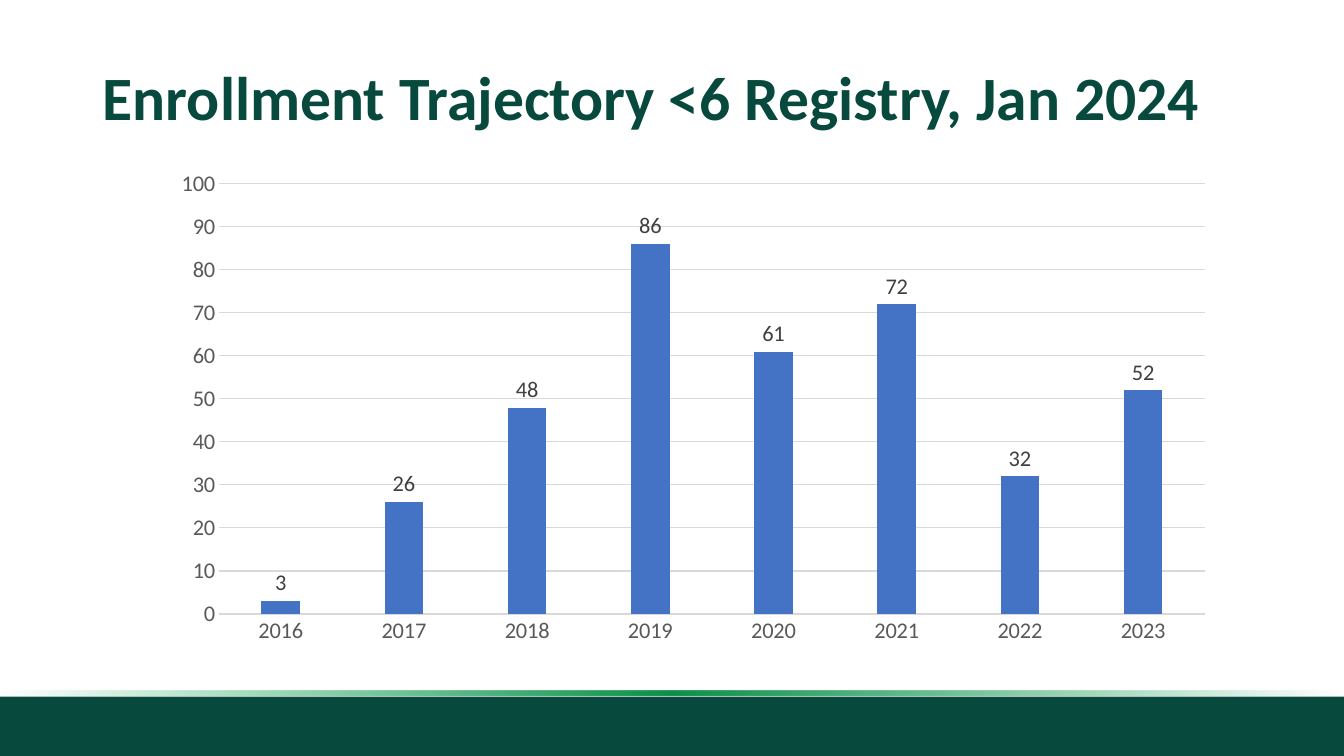
"""Build the enrollment trajectory slide with its column chart and footer bands."""
import dataclasses
import typing

import lxml.etree
import pptx
import pptx.chart.data
import pptx.dml.color
import pptx.enum.chart
import pptx.enum.shapes
import pptx.enum.text
import pptx.oxml.ns
import pptx.util

RGB = pptx.dml.color.RGBColor
DARK_GREEN = RGB(0x07, 0x49, 0x3C)
GLOW_LEFT = RGB(0x0D, 0x9D, 0x4F)
GLOW_MIDDLE = RGB(0x0C, 0x90, 0x49)
GLOW_RIGHT = RGB(0x0F, 0xAB, 0x56)
COLUMN_BLUE = RGB(0x44, 0x72, 0xC4)
AXIS_TEXT = RGB(0x59, 0x59, 0x59)
LABEL_TEXT = RGB(0x40, 0x40, 0x40)
GRID_GREY = RGB(0xD9, 0xD9, 0xD9)

FONT = "Calibri"
SLIDE_WIDTH = pptx.util.Inches(13.33)
SLIDE_HEIGHT = pptx.util.Inches(7.5)
ENROLLMENT = {
    "2016": 3, "2017": 26, "2018": 48, "2019": 86,
    "2020": 61, "2021": 72, "2022": 32, "2023": 52,
}


@dataclasses.dataclass(frozen=True)
class Area:
    """A region given in percent of the slide's width and height."""

    left: float
    top: float
    width: float
    height: float

    def box(self) -> tuple[int, int, int, int]:
        """Return left, top, width and height as slide lengths."""
        return (
            round(SLIDE_WIDTH * self.left / 100),
            round(SLIDE_HEIGHT * self.top / 100),
            round(SLIDE_WIDTH * self.width / 100),
            round(SLIDE_HEIGHT * self.height / 100),
        )


@dataclasses.dataclass(frozen=True)
class GlowStop:
    """One gradient stop, with position and opacity in percent."""

    position: int
    color: RGB
    opacity: int


@dataclasses.dataclass(frozen=True)
class Band:
    """A full-width footer band, plain with one stop and graded with more."""

    area: Area
    stops: tuple[GlowStop, ...]


TITLE_AREA = Area(6.9, 5.33, 86.27, 15.87)
CHART_AREA = Area(11.93, 21.2, 79.29, 65.47)
BANDS = (
    Band(Area(0, 92.13, 100, 7.87), (GlowStop(0, DARK_GREEN, 100),)),
    Band(
        Area(0, 91.33, 100, 0.73),
        (
            GlowStop(0, GLOW_LEFT, 0),
            GlowStop(50, GLOW_MIDDLE, 100),
            GlowStop(100, GLOW_RIGHT, 0),
        ),
    ),
)


def style_font(font: typing.Any, size: int, color: RGB, bold: bool = False) -> None:
    """Set the face, size, colour and weight of a font."""
    font.name = FONT
    font.size = pptx.util.Pt(size)
    font.bold = bold
    font.color.rgb = color


def style_line(line: typing.Any) -> None:
    """Give a chart line the thin grey of the grid."""
    line.color.rgb = GRID_GREY
    line.width = pptx.util.Pt(0.75)


def set_stops(fill: typing.Any, shape: typing.Any, stops: tuple[GlowStop, ...]) -> None:
    """Make a fill a horizontal gradient through the given stops."""
    qn = pptx.oxml.ns.qn
    fill.gradient()
    fill.gradient_angle = 180
    stop_list = shape.element.spPr.find(".//" + qn("a:gsLst"))
    for preset in list(stop_list):
        stop_list.remove(preset)
    for stop in stops:
        entry = lxml.etree.SubElement(stop_list, qn("a:gs"), pos=str(stop.position * 1000))
        color = lxml.etree.SubElement(entry, qn("a:srgbClr"), val=str(stop.color))
        lxml.etree.SubElement(color, qn("a:alpha"), val=str(stop.opacity * 1000))


def add_band(slide: typing.Any, band: Band) -> None:
    """Draw one footer band."""
    strip = slide.shapes.add_shape(pptx.enum.shapes.MSO_SHAPE.RECTANGLE, *band.area.box())
    strip.shadow.inherit = False
    strip.line.fill.background()
    if len(band.stops) > 1:
        set_stops(strip.fill, strip, band.stops)
    else:
        strip.fill.solid()
        strip.fill.fore_color.rgb = band.stops[0].color


def write_title(slide: typing.Any, wording: str) -> None:
    """Place the title placeholder and write its text."""
    heading = slide.shapes.title
    heading.left, heading.top, heading.width, heading.height = TITLE_AREA.box()
    frame = heading.text_frame
    frame.word_wrap = True
    frame.vertical_anchor = pptx.enum.text.MSO_ANCHOR.MIDDLE
    paragraph = frame.paragraphs[0]
    paragraph.alignment = pptx.enum.text.PP_ALIGN.LEFT
    paragraph.line_spacing = 0.9
    run = paragraph.add_run()
    run.text = wording
    style_font(run.font, 44, DARK_GREEN, bold=True)


def add_enrollment_chart(slide: typing.Any) -> None:
    """Draw the yearly enrollment as labelled columns."""
    chart_data = pptx.chart.data.CategoryChartData()
    chart_data.categories = list(ENROLLMENT)
    chart_data.add_series("Series 1", list(ENROLLMENT.values()))
    chart = slide.shapes.add_chart(
        pptx.enum.chart.XL_CHART_TYPE.COLUMN_CLUSTERED, *CHART_AREA.box(), chart_data
    ).chart
    chart.has_title = False
    chart.has_legend = False
    style_font(chart.font, 16, AXIS_TEXT)

    years, counts = chart.category_axis, chart.value_axis
    for axis in (years, counts):
        axis.major_tick_mark = pptx.enum.chart.XL_TICK_MARK.NONE
        axis.minor_tick_mark = pptx.enum.chart.XL_TICK_MARK.NONE
        style_font(axis.tick_labels.font, 16, AXIS_TEXT)
    style_line(years.format.line)
    counts.format.line.fill.background()
    counts.minimum_scale, counts.maximum_scale, counts.major_unit = 0, 100, 10
    style_line(counts.major_gridlines.format.line)

    plot = chart.plots[0]
    plot.vary_by_categories = False
    plot.gap_width = 219
    plot.overlap = -27
    columns = plot.series[0]
    columns.format.fill.solid()
    columns.format.fill.fore_color.rgb = COLUMN_BLUE
    labels = columns.data_labels
    labels.show_value = True
    labels.position = pptx.enum.chart.XL_LABEL_POSITION.OUTSIDE_END
    style_font(labels.font, 16, LABEL_TEXT)


def main() -> None:
    """Assemble and save the slide."""
    deck = pptx.Presentation()
    deck.slide_width, deck.slide_height = SLIDE_WIDTH, SLIDE_HEIGHT
    slide = deck.slides.add_slide(deck.slide_layouts.get_by_name("Title Only"))
    for band in BANDS:
        add_band(slide, band)
    write_title(slide, "Enrollment Trajectory <6 Registry, Jan 2024")
    add_enrollment_chart(slide)
    deck.save("out.pptx")


if __name__ == "__main__":
    main()
